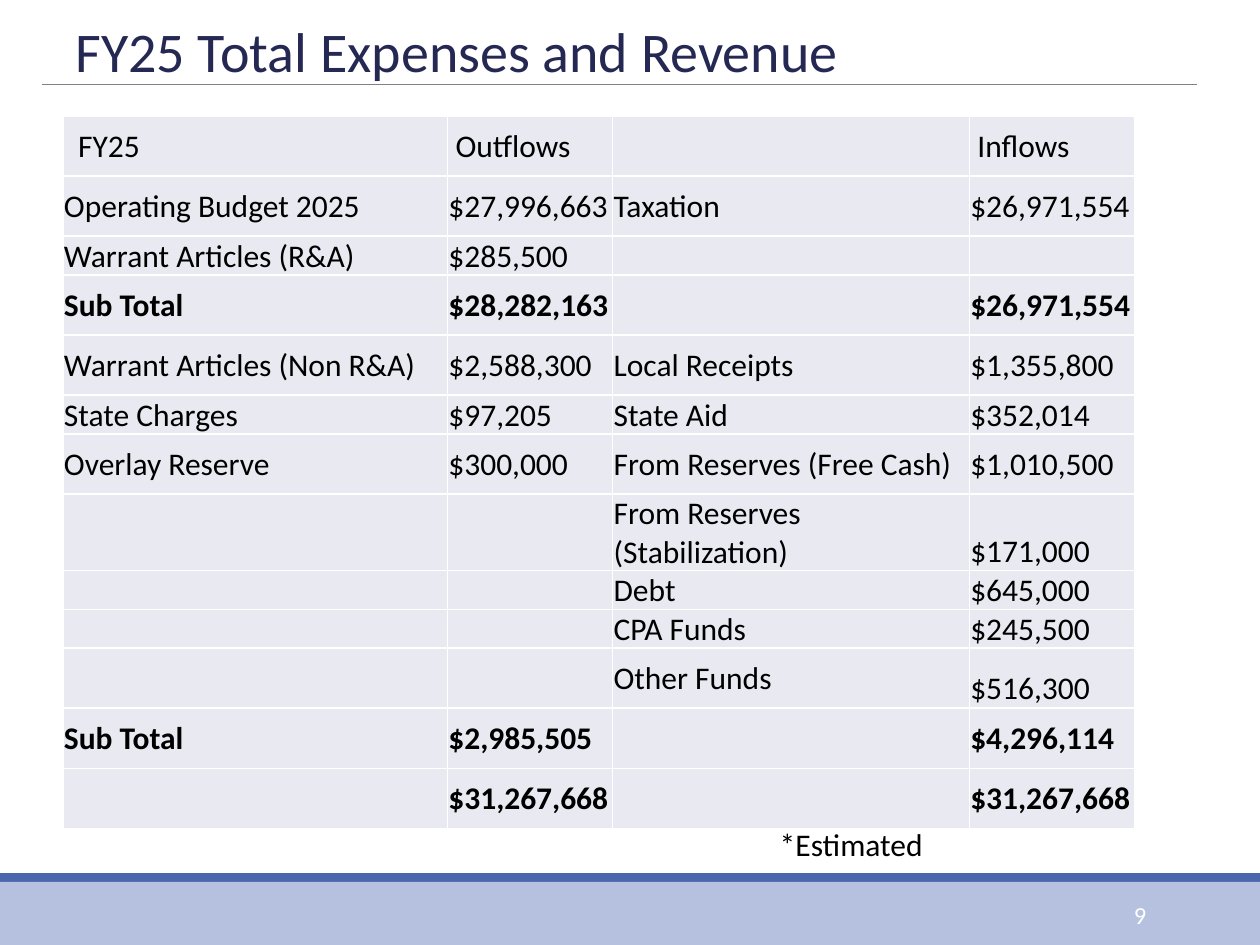
from lxml.etree import SubElement
from pptx import Presentation
from pptx.dml.color import RGBColor
from pptx.enum.shapes import MSO_CONNECTOR as Connector, MSO_SHAPE as Shape
from pptx.enum.text import MSO_ANCHOR as Anchor, MSO_AUTO_SIZE as AutoSize, PP_ALIGN as Align
from pptx.oxml.ns import qn
from pptx.util import Cm, Pt

FONT = "Calibri"
BLACK, WHITE, NAVY = "000000", "FFFFFF", "242852"
BLUE, PALE_BLUE, GREY, CELL_FILL = "4A66AC", "B5C1DF", "808080", "E9EAF1"

COLUMN_WIDTHS = [7.75, 3.33, 7.19, 3.33]
TALL, SHORT, DOUBLE = 1.21, 0.77, 1.54
ROW_HEIGHTS = [TALL, TALL, SHORT, TALL, TALL, SHORT, TALL, DOUBLE, SHORT, SHORT, TALL, TALL, TALL]
BUDGET = [
    ["  FY25", " Outflows", "", " Inflows"],
    ["Operating Budget 2025", "$27,996,663", "Taxation", "$26,971,554"],
    ["Warrant Articles (R&A)", "$285,500", "", ""],
    ["Sub Total", "$28,282,163", "", "$26,971,554"],
    ["Warrant Articles (Non R&A)", "$2,588,300", "Local Receipts", "$1,355,800"],
    ["State Charges", "$97,205", "State Aid", "$352,014"],
    ["Overlay Reserve", "$300,000", "From Reserves (Free Cash)", "$1,010,500"],
    ["", "", "From Reserves (Stabilization)", "$171,000"],
    ["", "", "Debt", "$645,000"],
    ["", "", "CPA Funds", "$245,500"],
    ["", "", "Other Funds", "$516,300"],
    ["Sub Total", "$2,985,505", "", "$4,296,114"],
    ["", "$31,267,668", "", "$31,267,668"],
]
TOTAL_ROWS = {3, 11, 12}
BOTTOM_CELLS = {(7, 3), (10, 3)}


def color(value):
    return RGBColor.from_string(value)


def write(text_frame, text, size, text_color, align=Align.LEFT, bold=False):
    text_frame.text = text
    for paragraph in text_frame.paragraphs:
        paragraph.alignment = align
        for run in paragraph.runs:
            run.font.name = FONT
            run.font.size = Pt(size)
            run.font.bold = bold
            run.font.color.rgb = color(text_color)


def set_title(slide, text):
    title = slide.shapes.title
    title.left, title.top, title.width, title.height = Cm(1.27), Cm(0.2), Cm(21.39), Cm(1.63)
    write(title.text_frame, text, 32, NAVY)
    title.text_frame.auto_size = AutoSize.NONE
    title.text_frame.vertical_anchor = Anchor.MIDDLE


def add_band(slide, top, height, fill):
    band = slide.shapes.add_shape(Shape.RECTANGLE, 0, Cm(top), Cm(25.4), Cm(height))
    band.shadow.inherit = False
    band.fill.solid()
    band.fill.fore_color.rgb = color(fill)
    band.line.fill.background()


def add_rule(slide, left, right, top):
    rule = slide.shapes.add_connector(Connector.STRAIGHT, Cm(left), Cm(top), Cm(right), Cm(top))
    rule.line.color.rgb = color(GREY)
    rule.line.width = Pt(0.5)
    SubElement(rule._element.spPr, qn("a:effectLst"))


def add_label(slide, left, top, width, text, size, text_color, anchor):
    label = slide.shapes.add_textbox(Cm(left), Cm(top), Cm(width), Cm(1.02))
    label.text_frame.word_wrap = True
    label.text_frame.vertical_anchor = anchor
    write(label.text_frame, text, size, text_color, Align.RIGHT)


def set_borders(cell):
    properties = cell._tc.get_or_add_tcPr()
    for index, side in enumerate(("a:lnL", "a:lnR", "a:lnT", "a:lnB")):
        border = properties.makeelement(qn(side), {"w": str(Pt(1))})
        fill = SubElement(border, qn("a:solidFill"))
        SubElement(fill, qn("a:srgbClr"), val=WHITE)
        properties.insert(index, border)


def format_cell(cell, text, bold, anchor):
    cell.fill.solid()
    cell.fill.fore_color.rgb = color(CELL_FILL)
    cell.margin_left = cell.margin_right = cell.margin_top = Cm(0.02)
    cell.margin_bottom = 0
    cell.vertical_anchor = anchor
    write(cell.text_frame, text, 18, BLACK, bold=bold)
    set_borders(cell)


def add_budget_table(slide):
    frame = slide.shapes.add_table(
        len(BUDGET), len(COLUMN_WIDTHS), Cm(1.27), Cm(2.34),
        Cm(sum(COLUMN_WIDTHS)), Cm(sum(ROW_HEIGHTS)))
    table = frame.table
    for column, width in zip(table.columns, COLUMN_WIDTHS):
        column.width = Cm(width)
    for row, height in zip(table.rows, ROW_HEIGHTS):
        row.height = Cm(height)
    for row_index, texts in enumerate(BUDGET):
        for column_index, text in enumerate(texts):
            place = row_index, column_index
            anchor = Anchor.BOTTOM if place in BOTTOM_CELLS else Anchor.MIDDLE
            format_cell(table.cell(*place), text, row_index in TOTAL_ROWS, anchor)


def main():
    presentation = Presentation()
    presentation.slide_width, presentation.slide_height = Cm(25.4), Cm(19.05)
    slide = presentation.slides.add_slide(presentation.slide_layouts[5])
    add_band(slide, 17.6, 0.18, BLUE)
    add_rule(slide, 0.84, 24.13, 1.7)
    add_band(slide, 17.78, 1.27, PALE_BLUE)
    set_title(slide, "FY25 Total Expenses and Revenue")
    add_label(slide, 20.62, 17.93, 2.74, "9", 14, WHITE, Anchor.MIDDLE)
    add_label(slide, 12.7, 16.51, 6.15, "*Estimated", 18, BLACK, Anchor.TOP)
    add_budget_table(slide)
    presentation.save("out.pptx")


if __name__ == "__main__":
    main()
